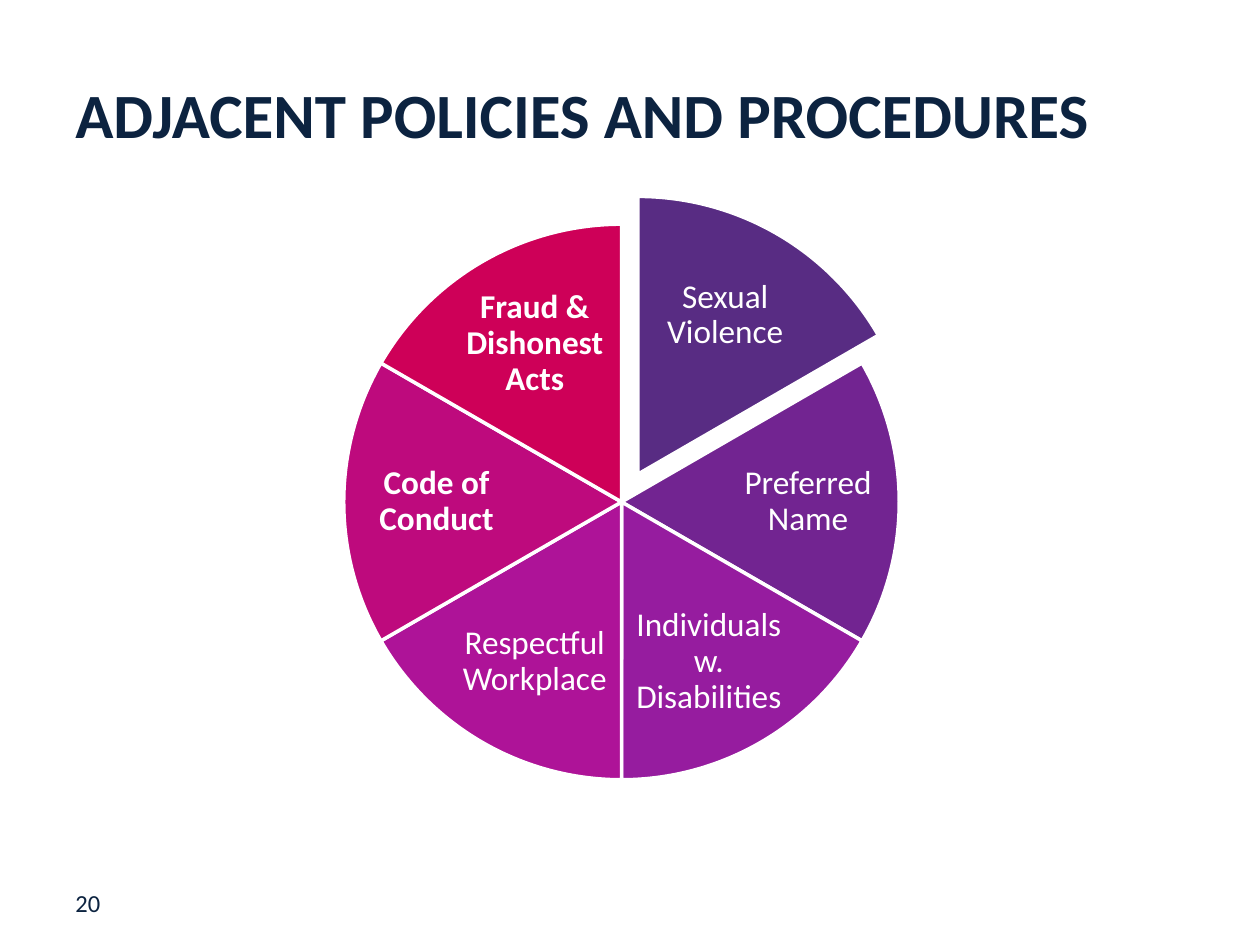
import dataclasses

import pptx
import pptx.dml.color
import pptx.enum.shapes
import pptx.enum.text
import pptx.util

Cm = pptx.util.Cm
Pt = pptx.util.Pt
ALIGN = pptx.enum.text.PP_ALIGN
ANCHOR = pptx.enum.text.MSO_ANCHOR

FONT = "Calibri"
HUES = {
    "navy": "0C2340",
    "white": "FFFFFF",
    "indigo": "582C83",
    "purple": "722491",
    "violet": "961C9F",
    "magenta": "AE1398",
    "berry": "BE0A7D",
    "crimson": "CE0058",
}

# Pie geometry in cm; angles in the preset's units of 100,000
SIZE = 11.2
HOME = (6.93, 4.52)
PULLED = (7.26, 3.96)
FULL = 216
TOP = 162
TALL = (3.28, 2.39)
WIDE = (3.38, 2.26)


@dataclasses.dataclass
class Slice:
    text: str
    hue: str
    spot: tuple[float, float]
    area: tuple[float, float] = TALL
    bold: bool = False
    base: tuple[float, float] = HOME


SLICES = [
    Slice("Sexual Violence", "indigo", (12.98, 5.16), base=PULLED),
    Slice("Preferred Name", "purple", (14.6, 8.99), WIDE),
    Slice("Individuals w. Disabilities", "violet", (12.65, 12.14)),
    Slice("Respectful Workplace", "magenta", (9.14, 12.14)),
    Slice("Code of Conduct", "berry", (7.11, 8.99), WIDE, bold=True),
    Slice("Fraud & Dishonest Acts", "crimson", (9.14, 5.74), bold=True),
]


def color(name: str) -> pptx.dml.color.RGBColor:
    return pptx.dml.color.RGBColor.from_string(HUES[name])


def add_text(slide, text: str, spot: tuple, area: tuple, size: float,
             hue: str, bold: bool = False, anchor=ANCHOR.TOP):
    box = slide.shapes.add_textbox(*map(Cm, spot + area))
    frame = box.text_frame
    frame.word_wrap = True
    frame.vertical_anchor = anchor
    line = frame.paragraphs[0]
    line.text = text
    line.font.name = FONT
    line.font.size = Pt(size)
    line.font.bold = bold
    line.font.color.rgb = color(hue)
    return frame


def add_slice(slide, part: Slice, start: float, sweep: float) -> None:
    pie = slide.shapes.add_shape(
        pptx.enum.shapes.MSO_SHAPE.PIE, *map(Cm, part.base + (SIZE, SIZE)))
    pie.adjustments[0] = start % FULL
    pie.adjustments[1] = (start + sweep) % FULL
    pie.shadow.inherit = False
    pie.fill.solid()
    pie.fill.fore_color.rgb = color(part.hue)
    pie.line.color.rgb = color("white")
    pie.line.width = Pt(2)

    label = add_text(slide, part.text, part.spot, part.area, 19, "white",
                     part.bold, ANCHOR.MIDDLE)
    label.margin_left = label.margin_right = Cm(0.08)
    label.margin_top = label.margin_bottom = Cm(0.08)
    label.paragraphs[0].alignment = ALIGN.CENTER
    label.paragraphs[0].line_spacing = 0.9


def main() -> None:
    deck = pptx.Presentation()
    deck.slide_width = Cm(25.4)
    deck.slide_height = Cm(19.05)
    slide = deck.slides.add_slide(deck.slide_layouts[6])

    # Page number and title
    add_text(slide, "20", (1.27, 17.78), (5.51, 0.86), 14, "navy")
    add_text(slide, "ADJACENT POLICIES AND PROCEDURES", (1.27, 1.47),
             (21.06, 1.7), 36, "navy", True, ANCHOR.BOTTOM)

    # Equal slices, clockwise from the top
    sweep = FULL / len(SLICES)
    for i, part in enumerate(SLICES):
        add_slice(slide, part, TOP + i * sweep, sweep)

    deck.save("out.pptx")


if __name__ == "__main__":
    main()
